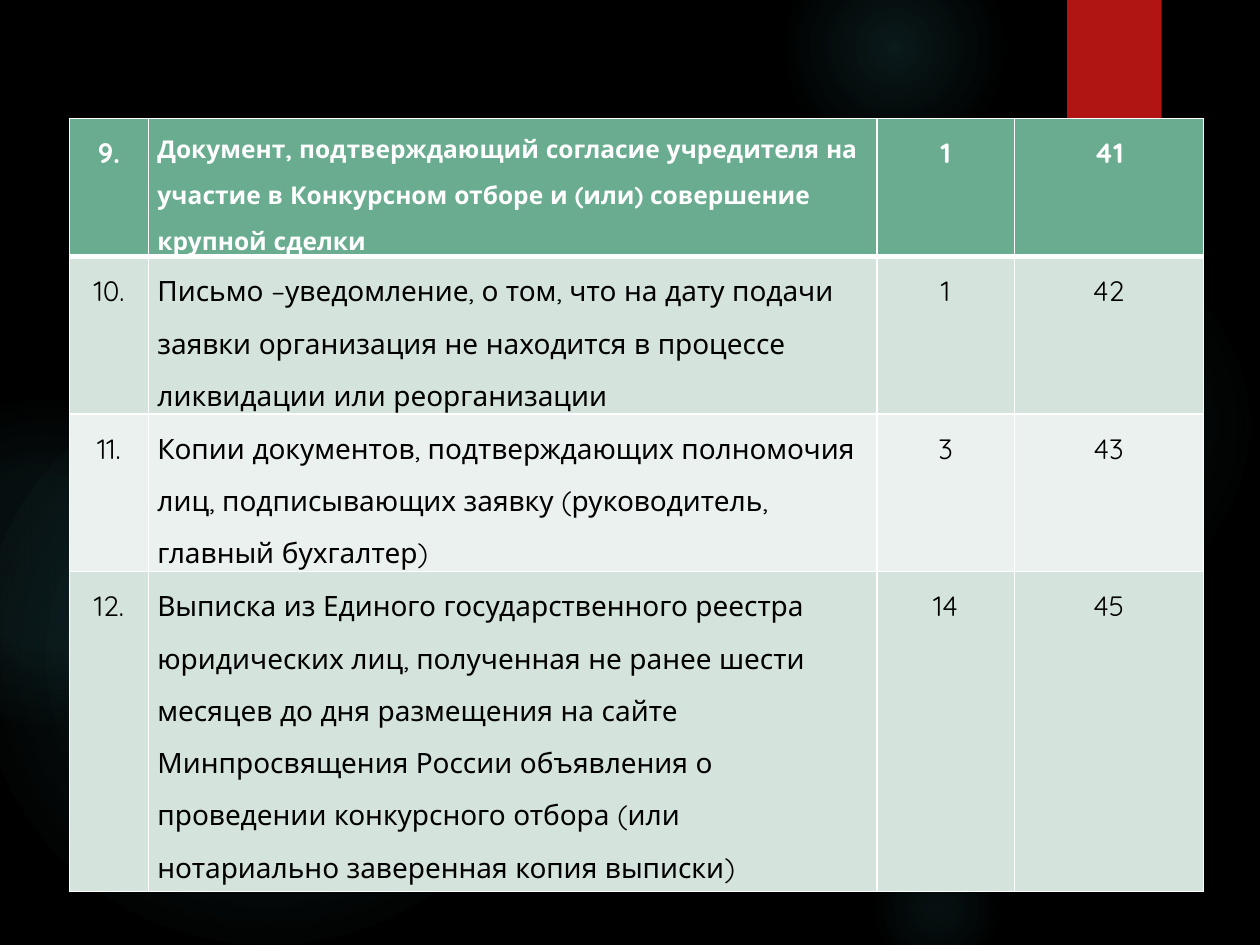
from lxml import etree
from pptx import Presentation
from pptx.dml import color
from pptx.enum import shapes, text
from pptx.oxml import parse_xml
from pptx.oxml import ns
from pptx.util import Inches, Pt

COLORS = {
    "background": "000000",
    "glow": "50B9C1",
    "ribbon": "B01513",
    "header": "6AAC90",
    "band_dark": "D4E3DB",
    "band_light": "EBF1EE",
    "white": "FFFFFF",
    "black": "000000",
}
FONT = "Quicksand"
ROWS = [
    ("9.", "Документ, подтверждающий согласие учредителя на участие в Конкурсном отборе "
     "и (или) совершение крупной сделки", "1", "41"),
    ("10.", "Письмо –уведомление, о том, что на дату подачи заявки организация не находится "
     "в процессе ликвидации или реорганизации", "1", "42"),
    ("11.", "Копии документов, подтверждающих полномочия лиц, подписывающих заявку "
     "(руководитель, главный бухгалтер)", "3", "43"),
    ("12.", "Выписка из Единого государственного реестра юридических лиц, полученная не ранее "
     "шести месяцев до дня размещения на сайте Минпросвящения России объявления о проведении "
     "конкурсного отбора (или нотариально заверенная копия выписки)", "14", "45"),
]
COLUMN_WIDTHS = [0.63, 5.78, 1.09, 1.5]
ROW_HEIGHTS = [1.09, 1.25, 1.25, 2.54]
GLOWS = [
    (6.89, 1.83, 3.08, [(0, 7), (36, 6), (69, 0)]),
    (6.22, -0.5, 1.75, [(0, 14), (36, 7), (73, 0)]),
    (6.89, 6.67, 1.08, [(0, 9), (36, 5), (66, 0)]),
    (-0.17, 2.92, 4.58, [(0, 11), (36, 10), (75, 0)]),
    (-0.92, 3.17, 2.58, [(0, 8), (36, 8), (72, 0)]),
]


def rgb(name):
    return color.RGBColor.from_string(COLORS[name])


def add_plain_shape(page, kind, left, top, width, height):
    shape = page.shapes.add_shape(kind, *map(Inches, (left, top, width, height)))
    shape.shadow.inherit = False
    shape.line.fill.background()
    return shape


def add_glow(page, left, top, size, stops):
    shape = add_plain_shape(page, shapes.MSO_SHAPE.OVAL, left, top, size, size)
    shape.fill.background()
    stop_xml = "".join(
        f'<a:gs pos="{position * 1000}"><a:srgbClr val="{COLORS["glow"]}">'
        f'<a:alpha val="{alpha * 1000}"/></a:srgbClr></a:gs>'
        for position, alpha in stops
    )
    gradient = parse_xml(
        f'<a:gradFill {ns.nsdecls("a")} rotWithShape="1"><a:gsLst>{stop_xml}</a:gsLst>'
        '<a:path path="circle"><a:fillToRect l="50000" t="50000" r="50000" b="50000"/>'
        "</a:path></a:gradFill>"
    )
    properties = shape.element.spPr
    properties.replace(properties.find(ns.qn("a:noFill")), gradient)


def add_ribbon(page):
    shape = add_plain_shape(page, shapes.MSO_SHAPE.RECTANGLE, 8.47, 0, 0.75, 1.2)
    shape.fill.solid()
    shape.fill.fore_color.rgb = rgb("ribbon")
    shape.element.spPr.find(ns.qn("a:effectLst")).append(parse_xml(
        f'<a:outerShdw {ns.nsdecls("a")} blurRad="{Pt(3)}" dist="{Pt(2)}" dir="5400000">'
        f'<a:srgbClr val="{COLORS["black"]}"><a:alpha val="45000"/></a:srgbClr></a:outerShdw>'
    ))


def set_borders(cell, row):
    widths = {"L": 1, "R": 1, "T": 3 if row == 1 else 1, "B": 3 if row == 0 else 1}
    properties = cell._tc.get_or_add_tcPr()
    for side, width in widths.items():
        line = etree.SubElement(properties, ns.qn(f"a:ln{side}"), w=str(Pt(width)))
        fill = etree.SubElement(line, ns.qn("a:solidFill"))
        etree.SubElement(fill, ns.qn("a:srgbClr"), val=COLORS["white"])


def format_cell(cell, row, column, content):
    is_header, is_description = row == 0, column == 1
    set_borders(cell, row)
    cell.fill.solid()
    band = "header" if is_header else "band_dark" if row % 2 else "band_light"
    cell.fill.fore_color.rgb = rgb(band)
    cell.margin_left = cell.margin_right = Inches(0.07)
    cell.margin_top = cell.margin_bottom = 0
    cell.text_frame.text = content
    para = cell.text_frame.paragraphs[0]
    para.line_spacing = 1.5
    para.alignment = text.PP_ALIGN.LEFT if is_description else text.PP_ALIGN.CENTER
    font = para.runs[0].font
    font.name = FONT
    font.size = Pt(14 if is_header and is_description else 16)
    font.bold = is_header
    font.color.rgb = rgb("white" if is_header else "black")


def add_document_table(page):
    table = page.shapes.add_table(
        len(ROWS), len(COLUMN_WIDTHS), Inches(0.55), Inches(0.94),
        Inches(sum(COLUMN_WIDTHS)), Inches(sum(ROW_HEIGHTS)),
    ).table
    for column, width in zip(table.columns, COLUMN_WIDTHS):
        column.width = Inches(width)
    for row, height in zip(table.rows, ROW_HEIGHTS):
        row.height = Inches(height)
    for row, contents in enumerate(ROWS):
        for column, content in enumerate(contents):
            format_cell(table.cell(row, column), row, column, content)


def main():
    deck = Presentation()
    deck.slide_width, deck.slide_height = Inches(10), Inches(7.5)
    page = deck.slides.add_slide(deck.slide_layouts[6])
    page.background.fill.solid()
    page.background.fill.fore_color.rgb = rgb("background")
    for glow in GLOWS:
        add_glow(page, *glow)
    add_ribbon(page)
    add_document_table(page)
    deck.save("out.pptx")


if __name__ == "__main__":
    main()
